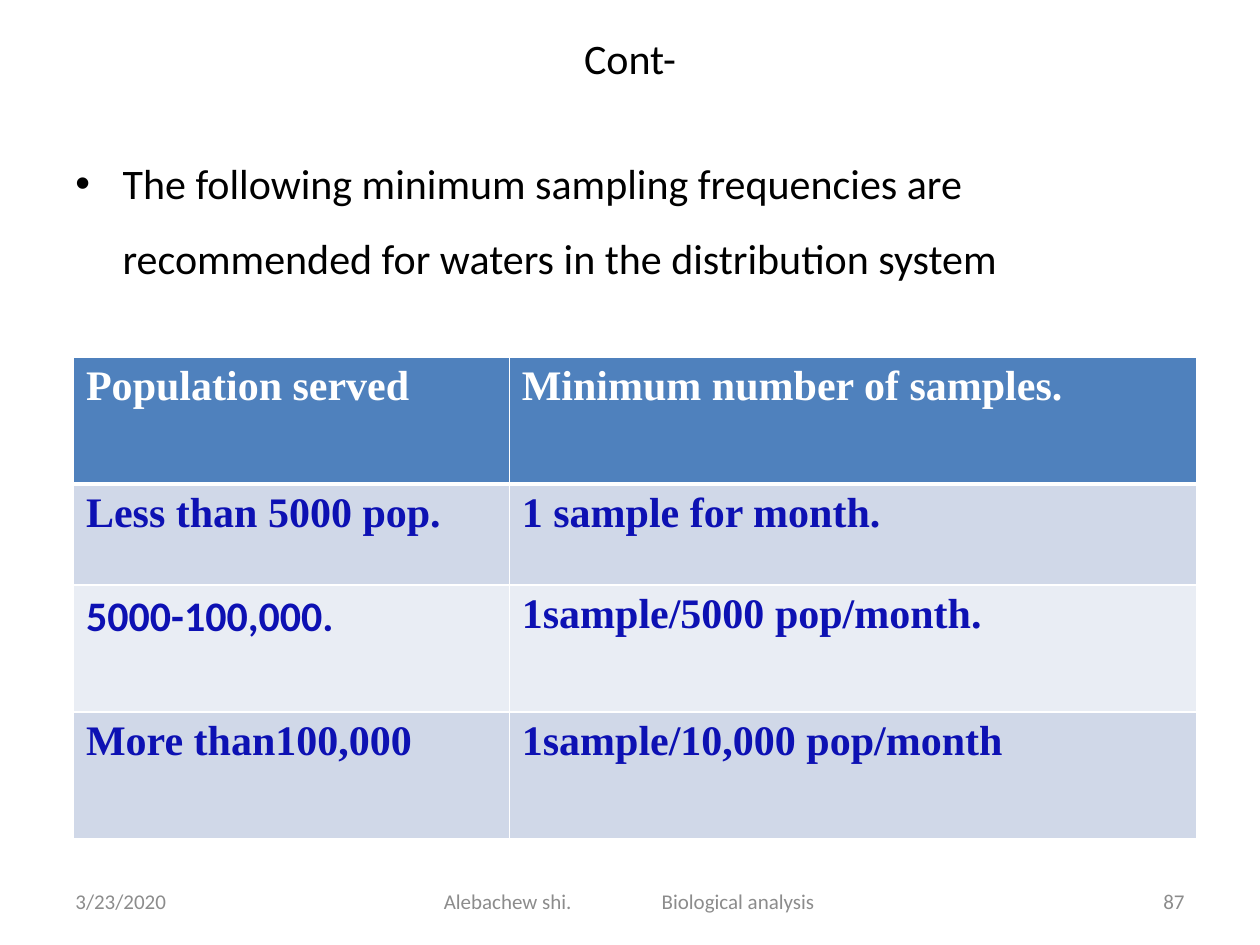
from dataclasses import dataclass

from lxml.etree import SubElement
from pptx import Presentation
from pptx.dml.color import RGBColor
from pptx.enum.text import MSO_ANCHOR as Anchor, PP_ALIGN as Align
from pptx.oxml.ns import qn
from pptx.util import Pt

COLORS = {
    "black": "000000", "white": "FFFFFF", "gray": "8C8C8C", "navy": "0D11B3",
    "header": "4F81BD", "band": "D0D8E8", "light": "E9EDF4",
}
SANS, SERIF = "Calibri", "Times New Roman"


@dataclass
class TextBox:
    text: str
    left: float
    top: float
    width: float
    height: float
    size: float = 12
    color: str = "gray"
    align: Align = Align.LEFT
    anchor: Anchor = Anchor.MIDDLE


@dataclass
class Row:
    cells: tuple[str, str]
    height: float
    fill: str
    color: str = "navy"
    fonts: tuple[str, str] = (SERIF, SERIF)
    bottom: float = 1


def rgb(name: str) -> RGBColor:
    return RGBColor.from_string(COLORS[name])


def format_runs(para, font: str, size: float, color: str, bold: bool = False) -> None:
    for span in para.runs:
        span.font.name, span.font.size, span.font.bold = font, Pt(size), bold
        span.font.color.rgb = rgb(color)


def draw_text(page, item: TextBox):
    box = page.shapes.add_textbox(
        Pt(item.left), Pt(item.top), Pt(item.width), Pt(item.height))
    frame = box.text_frame
    frame.word_wrap = True
    frame.vertical_anchor = item.anchor
    frame.text = item.text
    para = frame.paragraphs[0]
    para.alignment = item.align
    format_runs(para, SANS, item.size, item.color)
    return para


def add_bullet(para, indent: float) -> None:
    props = para._p.get_or_add_pPr()
    props.set("marL", str(Pt(indent)))
    props.set("indent", str(-Pt(indent)))
    SubElement(props, qn("a:buFont"), typeface="Arial")
    SubElement(props, qn("a:buChar"), char="•")


def add_tab_stop(para, position: float) -> None:
    stops = SubElement(para._p.get_or_add_pPr(), qn("a:tabLst"))
    SubElement(stops, qn("a:tab"), pos=str(Pt(position)), algn="l")


def set_borders(cell, bottom: float) -> None:
    props = cell._tc.get_or_add_tcPr()
    edges = (("a:lnL", 1), ("a:lnR", 1), ("a:lnT", 1), ("a:lnB", bottom))
    for tag, width in edges:
        line = SubElement(props, qn(tag), w=str(Pt(width)))
        fill = SubElement(line, qn("a:solidFill"))
        SubElement(fill, qn("a:srgbClr"), val=COLORS["white"])


def draw_table(page, left: float, top: float, widths: list[float], rows: list[Row]) -> None:
    table = page.shapes.add_table(
        len(rows), len(widths), Pt(left), Pt(top),
        Pt(sum(widths)), Pt(sum(row.height for row in rows))).table
    for column, width in zip(table.columns, widths):
        column.width = Pt(width)
    for index, row in enumerate(rows):
        table.rows[index].height = Pt(row.height)
        for cell, text, font in zip(table.rows[index].cells, row.cells, row.fonts):
            cell.text_frame.text = text
            format_runs(cell.text_frame.paragraphs[0], font, 24, row.color, bold=True)
            # Borders come before the fill in the cell properties
            set_borders(cell, row.bottom)
            cell.fill.solid()
            cell.fill.fore_color.rgb = rgb(row.fill)


def main() -> None:
    deck = Presentation()
    deck.slide_width, deck.slide_height = Pt(720), Pt(540)
    page = deck.slides.add_slide(deck.slide_layouts[6])

    # Title and bullet
    draw_text(page, TextBox("Cont-", 36, 0, 648, 66, 24, "black", Align.CENTER))
    bullet = draw_text(page, TextBox(
        "The following minimum sampling frequencies are recommended "
        "for waters in the distribution system",
        36, 72, 648, 410, 24, "black", anchor=Anchor.TOP))
    bullet.line_spacing = 1.5
    bullet.space_before = Pt(4.8)
    add_bullet(bullet, 27)

    # Sampling frequency table
    draw_table(page, 42, 204, [249, 393], [
        Row(("Population served", "Minimum number of samples."),
            72.6, "header", "white", bottom=3),
        Row(("Less than 5000 pop.", "1 sample for month."), 57.6, "band"),
        Row(("5000-100,000.", "1sample/5000 pop/month."),
            72.6, "light", fonts=(SANS, SERIF)),
        Row(("More than100,000", "1sample/10,000 pop/month"), 72.6, "band"),
    ])

    # Footer
    draw_text(page, TextBox("3/23/2020", 36, 500.5, 168, 28.75))
    footer = draw_text(page, TextBox(
        "Alebachew shi.\tBiological analysis", 246.5, 500.5, 228, 28.75))
    add_tab_stop(footer, 124.5)
    draw_text(page, TextBox("87", 516, 500.5, 168, 28.75, align=Align.RIGHT))

    deck.save("out.pptx")


if __name__ == "__main__":
    main()
